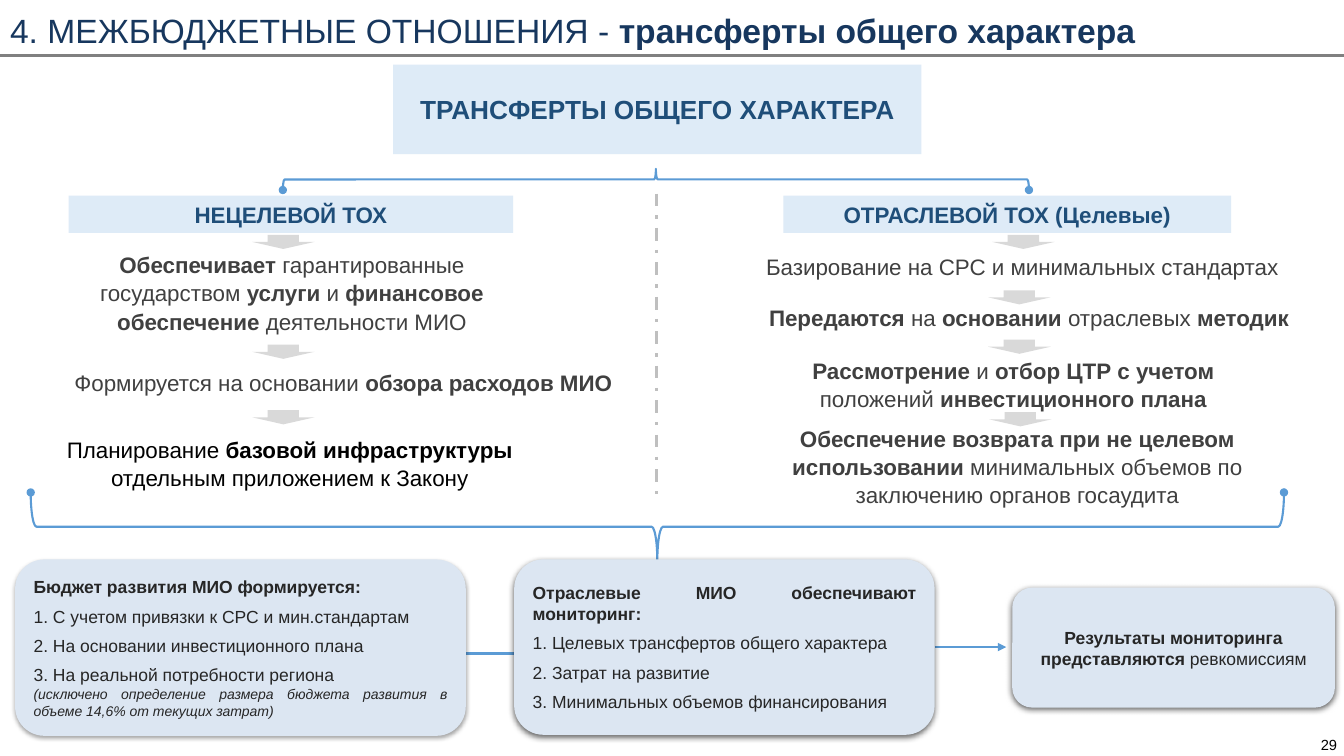
"""Build the slide on general-purpose transfers between budgets."""
from dataclasses import dataclass
from typing import Optional

from lxml import etree
from pptx import Presentation
from pptx import util as u
from pptx.dml import color
from pptx.enum import dml, shapes, text
from pptx.oxml import ns

EMU_PER_PX = 9144
KIND = shapes.MSO_SHAPE
ALIGN = text.PP_ALIGN


@dataclass(frozen=True)
class Theme:
    font: str = "Arial"
    title: str = "17375E"
    heading: str = "1F4E79"
    heading_fill: str = "DEEBF7"
    body: str = "404040"
    card: str = "262626"
    card_fill: str = "DCE6F2"
    black: str = "000000"
    arrow: str = "D9D9D9"
    accent: str = "5B9BD5"
    divider: str = "BFBFBF"
    rule: str = "808080"
    title_size: float = 24
    main_size: float = 18.7
    body_size: float = 16
    card_size: float = 12.5
    note_size: float = 10
    number_size: float = 10.5


THEME = Theme()


@dataclass(frozen=True)
class Box:
    left: int
    top: int
    width: int
    height: int

    def emu(self) -> list[int]:
        return [px(side) for side in (self.left, self.top, self.width, self.height)]


@dataclass(frozen=True)
class Heading:
    box: Box
    words: str
    size: float = THEME.body_size


@dataclass(frozen=True)
class Step:
    box: Box
    words: str
    ink: str = THEME.body


@dataclass(frozen=True)
class Shadow:
    alpha: int
    blur: float
    distance: float


@dataclass(frozen=True)
class Card:
    box: Box
    lines: tuple[str, ...]
    shadow: Shadow
    align: ALIGN = ALIGN.JUSTIFY
    note: str = ""


@dataclass(frozen=True)
class Brace:
    box: Box
    rotation: int


@dataclass(frozen=True)
class Link:
    start: tuple[int, int]
    end: tuple[int, int]
    ink: str = THEME.accent
    width: float = 2.25
    dash: Optional[dml.MSO_LINE] = None
    tail: str = ""


HEADINGS = (
    Heading(Box(390, 64, 524, 89), "*ТРАНСФЕРТЫ ОБЩЕГО ХАРАКТЕРА*", THEME.main_size),
    Heading(Box(68, 194, 441, 37), "*НЕЦЕЛЕВОЙ ТОХ*"),
    Heading(Box(777, 194, 444, 37), "*ОТРАСЛЕВОЙ ТОХ (Целевые)*"),
)
STEPS = (
    Step(Box(74, 249, 431, 82), "*Обеспечивает* гарантированные государством *услуги* и "
         "*финансовое обеспечение* деятельности МИО"),
    Step(Box(67, 365, 547, 28), "Формируется на основании *обзора расходов МИО*"),
    Step(Box(56, 432, 463, 55), "Планирование *базовой инфраструктуры *"
         "отдельным приложением к Закону", THEME.black),
    Step(Box(749, 250, 530, 28), "Базирование на СРС и минимальных стандартах"),
    Step(Box(762, 300, 517, 28), "*Передаются* на *основании* отраслевых *методик*"),
    Step(Box(771, 353, 468, 55), "*Рассмотрение* и *отбор ЦТР с учетом* положений "
         "*инвестиционного плана*"),
    Step(Box(783, 421, 452, 82), "*Обеспечение возврата при не целевом использовании* "
         "минимальных объемов по заключению органов госаудита"),
)
ARROWS = ((250, 233), (250, 342), (250, 407),
          (984, 233), (980, 288), (980, 337), (981, 409))
BRACES = (Brace(Box(640, -192, 21, 740), 90), Brace(Box(618, -99, 68, 1243), 270))
LINKS = (
    Link((161, 648), (655, 648)),
    Link((651, 192), (651, 493), THEME.divider, dash=dml.MSO_LINE.DASH_DOT),
    Link((927, 642), (998, 642), width=1.5, tail="triangle"),
    Link((0, 55), (1333, 55), THEME.rule),
)
DEEP = Shadow(63, 4.5, 1.5)
CARDS = (
    Card(Box(15, 555, 447, 175), (
        "*Бюджет развития МИО формируется:*",
        "1. С учетом привязки к СРС и мин.стандартам",
        "2. На основании инвестиционного плана",
        "3. На реальной потребности региона",
    ), Shadow(35, 3.1, 1.8), note="(исключено определение размера бюджета развития "
                                  "в объеме 14,6% от текущих затрат)"),
    Card(Box(510, 555, 417, 174), (
        "*Отраслевые МИО обеспечивают мониторинг:*",
        "1. Целевых трансфертов общего характера",
        "2. Затрат на развитие",
        "3. Минимальных объемов финансирования",
    ), DEEP),
    Card(Box(1004, 583, 320, 119),
         ("*Результаты мониторинга представляются* ревкомиссиям",), DEEP, ALIGN.CENTER),
)


def px(length: int) -> int:
    return u.Emu(length * EMU_PER_PX)


def rgb(ink: str) -> color.RGBColor:
    return color.RGBColor.from_string(ink)


def write(para, words: str, *, size: float, ink: str, align: ALIGN = ALIGN.CENTER,
          italic: bool = False, before: float = 0, spacing: float = 1.0) -> None:
    """Fill a paragraph, setting words between asterisks in bold."""
    para.alignment, para.space_before, para.line_spacing = align, u.Pt(before), spacing
    for index, part in enumerate(words.split("*")):
        if part:
            span = para.add_run()
            span.text = part
            span.font.name, span.font.size = THEME.font, u.Pt(size)
            span.font.bold, span.font.italic = index % 2 == 1, italic
            span.font.color.rgb = rgb(ink)


def set_frame(frame, inset: Optional[int] = None) -> None:
    frame.word_wrap = True
    frame.auto_size = text.MSO_AUTO_SIZE.NONE
    frame.vertical_anchor = text.MSO_ANCHOR.MIDDLE
    if inset is not None:
        frame.margin_left = frame.margin_right = px(inset)
        frame.margin_top = frame.margin_bottom = px(inset)


def add_label(page, box: Box, words: str, **style) -> None:
    label = page.shapes.add_textbox(*box.emu())
    set_frame(label.text_frame, 0)
    write(label.text_frame.paragraphs[0], words, **style)


def add_solid(page, kind: KIND, box: Box, fill: str):
    solid = page.shapes.add_shape(kind, *box.emu())
    solid.shadow.inherit = False
    solid.fill.solid()
    solid.fill.fore_color.rgb = rgb(fill)
    solid.line.fill.background()
    set_frame(solid.text_frame)
    return solid


def add_heading(page, heading: Heading) -> None:
    solid = add_solid(page, KIND.RECTANGLE, heading.box, THEME.heading_fill)
    write(solid.text_frame.paragraphs[0], heading.words, size=heading.size, ink=THEME.heading)


def add_brace(page, brace: Brace) -> None:
    shape = page.shapes.add_shape(KIND.LEFT_BRACE, *brace.box.emu())
    shape.rotation = brace.rotation
    shape.shadow.inherit = False
    shape.fill.background()
    shape.line.color.rgb, shape.line.width = rgb(THEME.accent), u.Pt(1.5)
    outline = shape.line._get_or_add_ln()
    for end in ("a:headEnd", "a:tailEnd"):
        etree.SubElement(outline, ns.qn(end), type="oval")


def add_link(page, link: Link) -> None:
    ends = [px(value) for value in link.start + link.end]
    line = page.shapes.add_connector(shapes.MSO_CONNECTOR.STRAIGHT, *ends)
    line.line.color.rgb, line.line.width = rgb(link.ink), u.Pt(link.width)
    if link.dash:
        line.line.dash_style = link.dash
    if link.tail:
        etree.SubElement(line.line._get_or_add_ln(), ns.qn("a:tailEnd"), type=link.tail)
    etree.SubElement(line._element.spPr, ns.qn("a:effectLst"))


def add_shadow(shape, shadow: Shadow) -> None:
    effects = shape._element.spPr.find(ns.qn("a:effectLst"))
    outer = etree.SubElement(effects, ns.qn("a:outerShdw"), blurRad=str(u.Pt(shadow.blur)),
                             dist=str(u.Pt(shadow.distance)), dir="5400000", rotWithShape="0")
    shade = etree.SubElement(outer, ns.qn("a:srgbClr"), val=THEME.black)
    etree.SubElement(shade, ns.qn("a:alpha"), val=str(shadow.alpha * 1000))


def add_card(page, card: Card) -> None:
    solid = add_solid(page, KIND.ROUNDED_RECTANGLE, card.box, THEME.card_fill)
    add_shadow(solid, card.shadow)
    frame = solid.text_frame
    for index, words in enumerate(card.lines):
        para = frame.add_paragraph() if index else frame.paragraphs[0]
        write(para, words, size=THEME.card_size, ink=THEME.card, align=card.align,
              before=6 if index else 0)
    if card.note:
        write(frame.add_paragraph(), card.note, size=THEME.note_size, ink=THEME.card,
              align=card.align, italic=True)


def add_title(page, box: Box, words: str) -> None:
    title = page.shapes.title
    title.left, title.top, title.width, title.height = box.emu()
    set_frame(title.text_frame)
    write(title.text_frame.paragraphs[0], words, size=THEME.title_size, ink=THEME.title,
          align=ALIGN.LEFT)


def main() -> None:
    deck = Presentation()
    deck.slide_width, deck.slide_height = px(1333), px(750)
    page = deck.slides.add_slide(deck.slide_layouts[5])
    add_title(page, Box(0, 13, 1238, 34),
              "4. МЕЖБЮДЖЕТНЫЕ ОТНОШЕНИЯ - *трансферты общего характера*")
    for link in LINKS:
        add_link(page, link)
    for heading in HEADINGS:
        add_heading(page, heading)
    for brace in BRACES:
        add_brace(page, brace)
    for left, top in ARROWS:
        add_solid(page, KIND.DOWN_ARROW, Box(left, top, 62, 14), THEME.arrow)
    for step in STEPS:
        add_label(page, step.box, step.words, size=THEME.body_size, ink=step.ink, spacing=1.05)
    for card in CARDS:
        add_card(page, card)
    add_label(page, Box(1310, 730, 23, 18), "29", size=THEME.number_size, ink=THEME.black,
              align=ALIGN.LEFT)
    deck.save("out.pptx")


if __name__ == "__main__":
    main()
